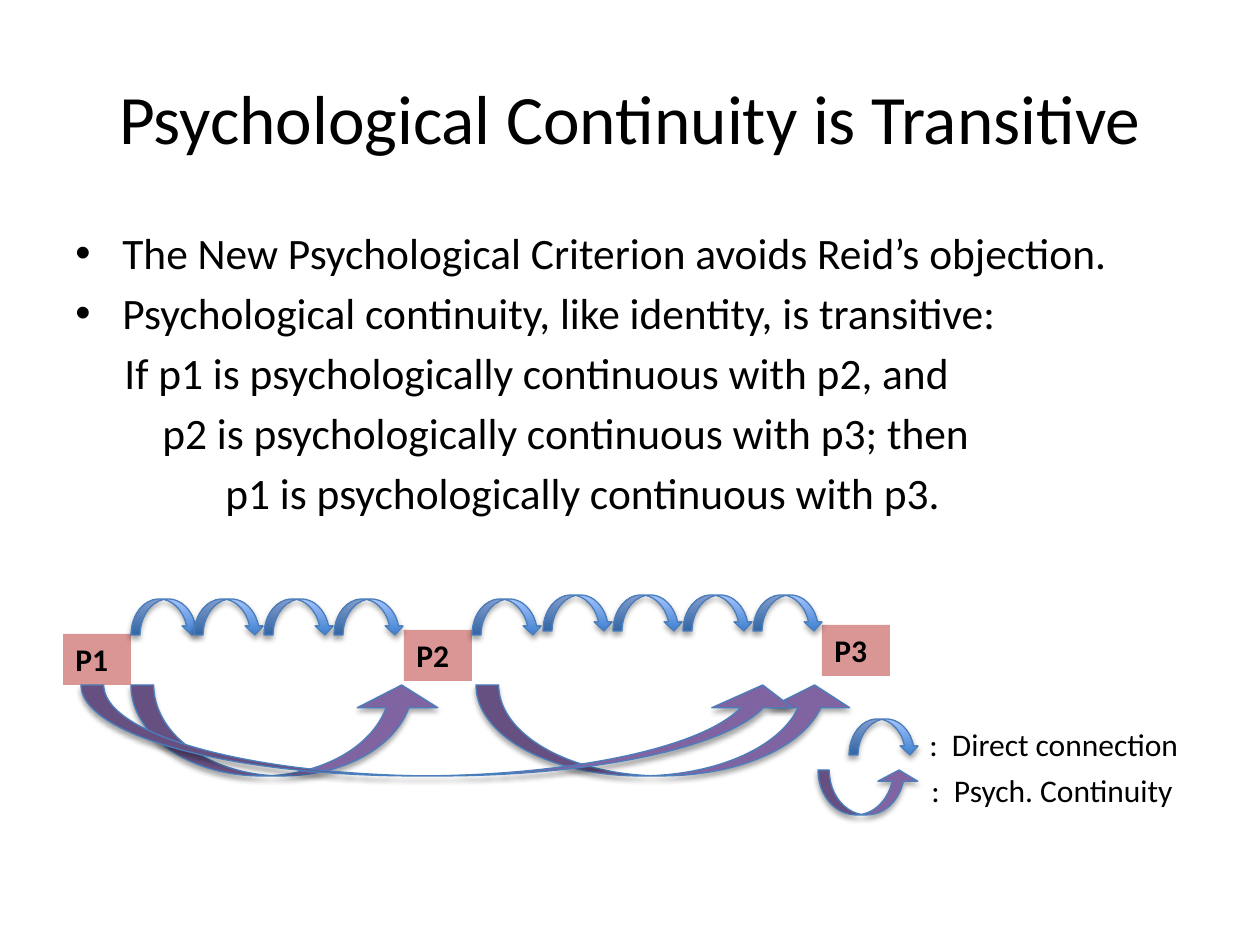
from lxml import etree
from pptx import Presentation
from pptx.dml.color import RGBColor
from pptx.enum.shapes import MSO_SHAPE
from pptx.enum.text import MSO_ANCHOR, MSO_AUTO_SIZE, PP_ALIGN
from pptx.oxml import parse_xml
from pptx.oxml.ns import nsdecls, qn
from pptx.util import Pt

RECT = MSO_SHAPE.RECTANGLE
DOWN_ARROW = MSO_SHAPE.CURVED_DOWN_ARROW
UP_ARROW = MSO_SHAPE.CURVED_UP_ARROW
TOP, MIDDLE = MSO_ANCHOR.TOP, MSO_ANCHOR.MIDDLE
LEFT, CENTER = PP_ALIGN.LEFT, PP_ALIGN.CENTER
GROW = MSO_AUTO_SIZE.SHAPE_TO_FIT_TEXT

FONT = "Calibri"
ARROW_LINE = "4B7EBC"
ARROW_W, ARROW_H = 70, 36


def px(n):
    return round(n * 914400 / 126)


def rgb(value):
    return RGBColor.from_string(value)


def box(*lengths):
    return [px(n) for n in lengths]


def add_run(p, text, size=18, bold=False, color="000000"):
    r = p.add_run()
    r.text = text
    r.font.name = FONT
    r.font.size = Pt(size)
    r.font.bold = bold
    r.font.color.rgb = rgb(color)


def write(sp, text, align=LEFT, anchor=TOP, grow=False, **font):
    tf = sp.text_frame
    tf.word_wrap = True
    tf.vertical_anchor = anchor
    if grow:
        tf.auto_size = GROW
    p = tf.paragraphs[0]
    p.alignment = align
    add_run(p, text, **font)


def add_text(slide, x, y, w, h, text, **fmt):
    write(slide.shapes.add_textbox(*box(x, y, w, h)), text, **fmt)


def add_body(slide, x, y, w, h, lines):
    tf = slide.shapes.add_textbox(*box(x, y, w, h)).text_frame
    tf.word_wrap = True
    for i, (text, margin, bullet) in enumerate(lines):
        p = tf.paragraphs[0] if i == 0 else tf.add_paragraph()
        p.space_before = Pt(4.5)
        add_run(p, text, size=24.8)
        pPr = p._p.get_or_add_pPr()
        pPr.set("marL", str(px(margin)))
        if bullet:
            pPr.set("indent", str(-px(margin)))
            etree.SubElement(pPr, qn("a:buFont"), typeface="Arial")
            etree.SubElement(pPr, qn("a:buChar"), char="•")


def add_person(slide, x, y, name):
    sp = slide.shapes.add_shape(RECT, *box(x, y, 68, 51))
    sp.shadow.inherit = False
    sp.fill.solid()
    sp.fill.fore_color.rgb = rgb("D99694")
    sp.line.fill.background()
    write(sp, name, bold=True, grow=True)


def add_arrow(slide, kind, x, y, w, h):
    sp = slide.shapes.add_shape(kind, *box(x, y, w, h))
    sp.line.color.rgb = rgb(ARROW_LINE)
    sp.line.width = Pt(0.75)
    sp._element.spPr.append(parse_xml(
        f'<a:effectLst {nsdecls("a")}>'
        f'<a:outerShdw blurRad="{Pt(3.1)}" dist="{Pt(1.8)}" dir="5400000" rotWithShape="0">'
        '<a:srgbClr val="000000"><a:alpha val="35000"/></a:srgbClr>'
        '</a:outerShdw></a:effectLst>'))
    return sp


def add_connection(slide, x, y):
    sp = add_arrow(slide, DOWN_ARROW, x, y, ARROW_W, ARROW_H)
    sp.fill.gradient()
    sp.fill.gradient_angle = 90
    for stop, color in zip(sp.fill.gradient_stops, ("3F80CE", "A4C4FF")):
        stop.color.rgb = rgb(color)


def add_continuity(slide, x, y, w, h):
    sp = add_arrow(slide, UP_ARROW, x, y, w, h)
    sp.fill.solid()
    sp.fill.fore_color.rgb = rgb("8064A2")
    for i, value in enumerate((0.25, 0.886, 0.25)):
        sp.adjustments[i] = value


def main():
    prs = Presentation()
    prs.slide_width, prs.slide_height = box(1260, 945)
    slide = prs.slides.add_slide(prs.slide_layouts[6])

    add_text(slide, 63, 38, 1134, 158, "Psychological Continuity is Transitive",
             size=39.6, align=CENTER, anchor=MIDDLE)
    add_body(slide, 63, 220, 1134, 324, [
        ("The New Psychological Criterion avoids Reid’s objection.", 47, True),
        ("Psychological continuity, like identity, is transitive:", 47, True),
        ("If p1 is psychologically continuous with p2, and", 49, False),
        ("p2 is psychologically continuous with p3; then", 87, False),
        ("p1 is psychologically continuous with p3.", 150, False),
    ])

    for x, y, name in ((63, 634, "P1"), (404, 630, "P2"), (822, 625, "P3")):
        add_person(slide, x, y, name)

    for x in (131, 194, 264, 334, 472):
        add_connection(slide, x, 599)
    for i in range(4):
        add_connection(slide, 543 + i * ARROW_W, 595)

    for x, w in ((131, 311), (476, 379), (81, 722)):
        add_continuity(slide, x, 685, w, 91)

    add_connection(slide, 849, 719)
    add_text(slide, 917, 719, 341, 51, ":  Direct connection", grow=True)
    add_continuity(slide, 818, 770, 101, 45)
    add_text(slide, 919, 765, 341, 51, ":  Psych. Continuity", grow=True)

    prs.save("out.pptx")


if __name__ == "__main__":
    main()
